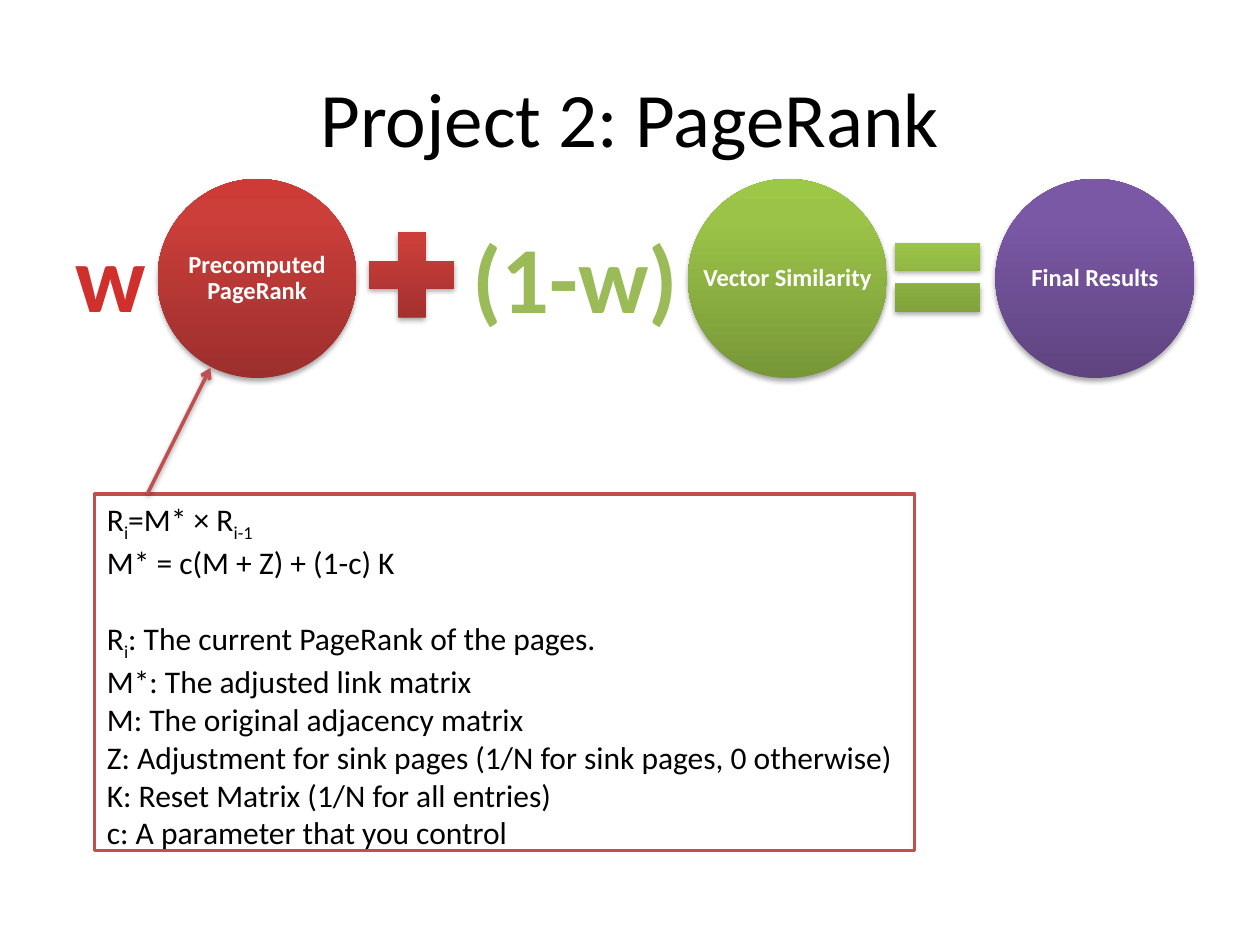
import pptx
import pptx.util
import pptx.dml.color
import pptx.enum.shapes
import pptx.enum.text
import pptx.oxml
import pptx.oxml.ns
from lxml import etree

Inches = pptx.util.Inches
Pt = pptx.util.Pt
RGBColor = pptx.dml.color.RGBColor
MSO_SHAPE = pptx.enum.shapes.MSO_SHAPE
PP_ALIGN = pptx.enum.text.PP_ALIGN
MSO_ANCHOR = pptx.enum.text.MSO_ANCHOR
qn = pptx.oxml.ns.qn

FONT = "Calibri"
BLACK = RGBColor(0x00, 0x00, 0x00)
WHITE = RGBColor(0xFF, 0xFF, 0xFF)
WEIGHT_RED = RGBColor(0xD0, 0x2F, 0x2C)
WEIGHT_GREEN = RGBColor(0x9B, 0xBB, 0x59)
OUTLINE_RED = RGBColor(0xC0, 0x50, 0x4D)

# Gradient colours from bottom to top, placed at GRADIENT_STOPS percent
GRADIENT_STOPS = (0, 80, 100)
RED = (RGBColor(0x9C, 0x2F, 0x2D), RGBColor(0xCB, 0x3E, 0x3A), RGBColor(0xCE, 0x3B, 0x37))
GREEN = (RGBColor(0x77, 0x97, 0x37), RGBColor(0x9B, 0xC3, 0x48), RGBColor(0x9D, 0xC7, 0x46))
PURPLE = (RGBColor(0x5F, 0x44, 0x80), RGBColor(0x7B, 0x58, 0xA6), RGBColor(0x7C, 0x57, 0xA8))

CIRCLE_SIZE = 1.58
SIGN_SIZE = 0.92

# Each line is a list of (text, is_subscript) runs
FORMULAS = [
    [("R", False), ("i", True), ("=M* × R", False), ("i-1", True)],
    [("M* = c(M + Z) + (1-c) K", False)],
]
DEFINITIONS = [
    [("R", False), ("i", True), (": The current PageRank of the pages.", False)],
    [("M*: The adjusted link matrix", False)],
    [("M: The original adjacency matrix", False)],
    [("Z: Adjustment for sink pages (1/N for sink pages, 0 otherwise)", False)],
    [("K: Reset Matrix (1/N for all entries)", False)],
    [("c: A parameter that you control", False)],
]


def format_font(font, size, color, bold=False):
    font.name = FONT
    font.size = Pt(size)
    font.bold = bold
    font.color.rgb = color


def add_shadow(shape, distance):
    shape_properties = shape.element.spPr
    effects = shape_properties.find(qn("a:effectLst"))
    if effects is None:
        effects = etree.SubElement(shape_properties, qn("a:effectLst"))
    shadow = etree.SubElement(
        effects, qn("a:outerShdw"), blurRad=str(Pt(3.1)), dist=str(Pt(distance)),
        dir="5400000", rotWithShape="0")
    color = etree.SubElement(shadow, qn("a:srgbClr"), val=str(BLACK))
    etree.SubElement(color, qn("a:alpha"), val="35000")


def add_gradient_shape(slide, kind, left, top, size, colors):
    shape = slide.shapes.add_shape(kind, Inches(left), Inches(top), Inches(size), Inches(size))
    shape.shadow.inherit = False
    shape.line.fill.background()
    shape.fill.gradient()
    shape.fill.gradient_angle = 90
    stops = shape.element.spPr.find(".//" + qn("a:gsLst"))
    for stop in list(stops):
        stops.remove(stop)
    for position, color in zip(GRADIENT_STOPS, colors):
        stop = etree.SubElement(stops, qn("a:gs"), pos=str(position * 1000))
        etree.SubElement(stop, qn("a:srgbClr"), val=str(color))
    add_shadow(shape, 1.8)


def add_text_box(slide, left, top, width, height):
    return slide.shapes.add_textbox(Inches(left), Inches(top), Inches(width), Inches(height))


def add_circle(slide, left, top, text, colors):
    add_gradient_shape(slide, MSO_SHAPE.OVAL, left, top, CIRCLE_SIZE, colors)
    # The label uses the full circle width, more than the text area of an oval
    text_frame = add_text_box(slide, left, top, CIRCLE_SIZE, CIRCLE_SIZE).text_frame
    text_frame.word_wrap = True
    text_frame.vertical_anchor = MSO_ANCHOR.MIDDLE
    text_frame.margin_left = text_frame.margin_right = Inches(0.02)
    text_frame.margin_top = text_frame.margin_bottom = Inches(0.02)
    text_frame.text = text
    paragraph = text_frame.paragraphs[0]
    paragraph.alignment = PP_ALIGN.CENTER
    paragraph.line_spacing = 0.9
    format_font(paragraph.runs[0].font, 14, WHITE, bold=True)


def add_weight(slide, left, top, width, text, color):
    text_frame = add_text_box(slide, left, top, width, 1.01).text_frame
    text_frame.word_wrap = False
    text_frame.text = text
    format_font(text_frame.paragraphs[0].runs[0].font, 54, color, bold=True)


def add_title(slide, left, top, width, height):
    title = slide.shapes.title
    title.left, title.top = Inches(left), Inches(top)
    title.width, title.height = Inches(width), Inches(height)
    title.text_frame.text = "Project 2: PageRank"
    title.text_frame.vertical_anchor = MSO_ANCHOR.MIDDLE
    paragraph = title.text_frame.paragraphs[0]
    paragraph.alignment = PP_ALIGN.CENTER
    format_font(paragraph.runs[0].font, 44, BLACK)


def add_equation(slide, left, top):
    # Terms
    add_circle(slide, left + 0.75, top, "Precomputed PageRank", RED)
    add_circle(slide, left + 4.96, top, "Vector Similarity", GREEN)
    add_circle(slide, left + 7.4, top, "Final Results", PURPLE)
    # Operators
    add_gradient_shape(slide, MSO_SHAPE.MATH_PLUS, left + 2.31, top + 0.3, SIGN_SIZE, RED)
    add_gradient_shape(slide, MSO_SHAPE.MATH_EQUAL, left + 6.48, top + 0.32, SIGN_SIZE, GREEN)
    # Weights
    add_weight(slide, left, top + 0.26, 0.77, "w", WEIGHT_RED)
    add_weight(slide, left + 3.15, top + 0.27, 1.86, "(1-w)", WEIGHT_GREEN)


def add_explanation(slide, left, top, width, height):
    box = add_text_box(slide, left, top, width, height)
    box.fill.solid()
    box.fill.fore_color.rgb = WHITE
    box.line.color.rgb = OUTLINE_RED
    box.line.width = Pt(2)
    text_frame = box.text_frame
    text_frame.word_wrap = True
    for index, line in enumerate(FORMULAS + DEFINITIONS):
        paragraph = text_frame.paragraphs[0] if index == 0 else text_frame.add_paragraph()
        if index == len(FORMULAS):
            paragraph.space_before = Pt(22)
        for text, is_subscript in line:
            run = paragraph.add_run()
            run.text = text
            format_font(run.font, 18, BLACK)
            if is_subscript:
                run.font.element.set("baseline", "-25000") if hasattr(
                    run.font, "element") else run._r.get_or_add_rPr().set("baseline", "-25000")


def add_arrow(slide, start_x, start_y, end_x, end_y):
    arrow = slide.shapes.add_connector(
        pptx.enum.shapes.MSO_CONNECTOR.STRAIGHT,
        Inches(start_x), Inches(start_y), Inches(end_x), Inches(end_y))
    arrow.line.color.rgb = OUTLINE_RED
    arrow.line.width = Pt(2)
    etree.SubElement(arrow.element.spPr.find(qn("a:ln")), qn("a:tailEnd"), type="arrow")
    add_shadow(arrow, 1.6)


def main():
    presentation = pptx.Presentation()
    presentation.slide_width = Inches(10)
    presentation.slide_height = Inches(7.5)
    slide = presentation.slides.add_slide(presentation.slide_layouts[5])
    add_title(slide, 0.5, 0.3, 9, 1.25)
    add_equation(slide, 0.5, 1.42)
    add_explanation(slide, 0.75, 3.92, 6.51, 2.83)
    add_arrow(slide, 1.17, 3.92, 1.67, 2.92)
    presentation.save("out.pptx")


if __name__ == "__main__":
    main()
